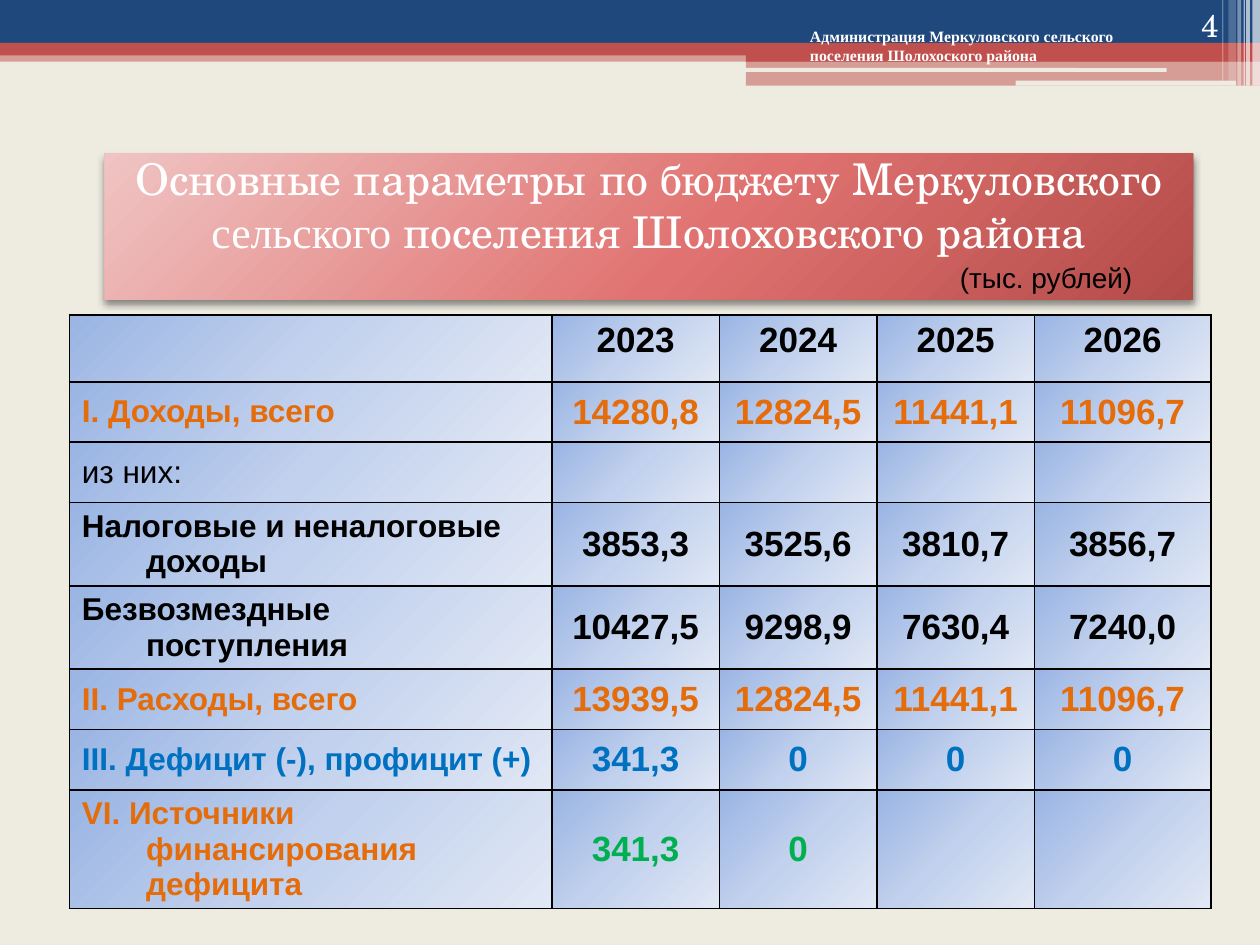
from dataclasses import dataclass

from lxml import etree
from pptx import Presentation
from pptx.dml.color import RGBColor
from pptx.enum.shapes import MSO_SHAPE
from pptx.enum.text import MSO_ANCHOR, MSO_AUTO_SIZE, PP_ALIGN
from pptx.oxml.ns import qn
from pptx.util import Inches, Pt

RECT, ROUND = MSO_SHAPE.RECTANGLE, MSO_SHAPE.ROUNDED_RECTANGLE
LEFT, CENTER, RIGHT = PP_ALIGN.LEFT, PP_ALIGN.CENTER, PP_ALIGN.RIGHT
TOP, MIDDLE, BOTTOM = MSO_ANCHOR.TOP, MSO_ANCHOR.MIDDLE, MSO_ANCHOR.BOTTOM
FIT_SHAPE, NO_FIT = MSO_AUTO_SIZE.SHAPE_TO_FIT_TEXT, MSO_AUTO_SIZE.NONE


@dataclass(frozen=True)
class Theme:
    paper: str = "EEECE1"
    navy: str = "1F497D"
    red: str = "C0504D"
    white: str = "FFFFFF"
    black: str = "000000"
    orange: str = "E46C0A"
    blue: str = "0070C0"
    green: str = "00B050"
    title_stops: tuple = ((0, "EFC4C3"), (55, "E07371"), (100, "B34B48"))
    title_focus: tuple = (-40, -90, 140, 190)
    cell_stops: tuple = ((0, "9AB5E4"), (50, "C2D1ED"), (100, "E1E8F5"))
    cell_focus: tuple = (0, 0, 100, 100)
    serif: str = "TeX Gyre Schola"
    roman: str = "Times New Roman"
    sans: str = "Arial"
    title_size: float = 25
    value_size: float = 20
    label_size: float = 18
    unit_size: float = 16
    header_size: float = 9


def element(parent, tag, **attributes):
    node = etree.SubElement(parent, qn(tag))
    for name, value in attributes.items():
        node.set(name, str(value))
    return node


def solid_color(parent, color, opacity=100):
    node = element(parent, "a:srgbClr", val=color)
    if opacity < 100:
        element(node, "a:alpha", val=opacity * 1000)


def gradient(parent, stops, focus):
    fill = element(parent, "a:gradFill", rotWithShape=1)
    stop_list = element(fill, "a:gsLst")
    for position, color in stops:
        solid_color(element(stop_list, "a:gs", pos=position * 1000), color)
    sides = {side: share * 1000 for side, share in zip("ltrb", focus)}
    element(element(fill, "a:path", path="circle"), "a:fillToRect", **sides)


class SlideBuilder:
    """Places elements on a grid of 100 columns by 75 rows."""

    def __init__(self, deck, theme):
        self.theme = theme
        self.column, self.row = deck.slide_width / 100, deck.slide_height / 75
        self.page = deck.slides.add_slide(deck.slide_layouts[5])
        background = self.page.background.fill
        background.solid()
        background.fore_color.rgb = RGBColor.from_string(theme.paper)

    def place(self, left, top, width, height):
        return (round(left * self.column), round(top * self.row),
                round(width * self.column), round(height * self.row))

    def style(self, span, size, color, font, bold=False):
        span.font.size, span.font.name, span.font.bold = Pt(size), font, bold
        span.font.color.rgb = RGBColor.from_string(color)

    def band(self, area, color, opacity=100, kind=RECT):
        shape = self.page.shapes.add_shape(kind, *self.place(*area))
        shape.shadow.inherit = False
        shape.line.fill.background()
        shape.fill.solid()
        shape.fill.fore_color.rgb = RGBColor.from_string(color)
        if opacity < 100:
            color_node = shape.fill._xPr.find(".//" + qn("a:srgbClr"))
            element(color_node, "a:alpha", val=opacity * 1000)

    def title(self, area, spans):
        box = self.page.shapes.title
        box.left, box.top, box.width, box.height = self.place(*area)
        properties = box._element.spPr
        gradient(properties, self.theme.title_stops, self.theme.title_focus)
        shadow = element(element(properties, "a:effectLst"), "a:outerShdw",
                         blurRad=Pt(4), dist=Pt(2), dir=90 * 60000, rotWithShape=0)
        solid_color(shadow, self.theme.black, 45)
        frame = box.text_frame
        frame.auto_size, frame.vertical_anchor = NO_FIT, MIDDLE
        frame.margin_bottom = Inches(0.4)  # room for the unit note
        para = frame.paragraphs[0]
        para.alignment = CENTER
        for text, font in spans:
            span = para.add_run()
            span.text = text
            self.style(span, self.theme.title_size, self.theme.white, font)
        self.page.shapes._spTree.append(box._element)  # above the bands

    def text(self, area, text, size, color, font, bold=False,
             align=LEFT, anchor=TOP, fit=FIT_SHAPE):
        box = self.page.shapes.add_textbox(*self.place(*area))
        frame = box.text_frame
        frame.word_wrap, frame.auto_size, frame.vertical_anchor = True, fit, anchor
        frame.text = text
        para = frame.paragraphs[0]
        para.alignment = align
        self.style(para.runs[0], size, color, font, bold)

    def cell(self, cell, text, size, color, bold, align, anchor):
        cell.vertical_anchor = anchor
        properties = cell._tc.get_or_add_tcPr()
        for side in ("a:lnL", "a:lnR", "a:lnT", "a:lnB"):
            line = element(properties, side, w=Pt(1))
            solid_color(element(line, "a:solidFill"), self.theme.black)
        gradient(properties, self.theme.cell_stops, self.theme.cell_focus)
        if not text:
            return
        cell.text = text
        para = cell.text_frame.paragraphs[0]
        para.alignment = align
        indent = Inches(0.51)
        para._p.get_or_add_pPr().set("marL", str(indent))
        para._p.get_or_add_pPr().set("indent", str(-indent))
        self.style(para.runs[0], size, color, self.theme.sans, bold)

    def table(self, left, top, widths, records):
        """Each record: height, label, values, label colour, value colour, bold."""
        area = self.place(left, top, sum(widths), sum(record[0] for record in records))
        table = self.page.shapes.add_table(len(records), len(widths), *area).table
        table.first_row = table.horz_banding = False
        for column, width in zip(table.columns, widths):
            column.width = round(width * self.column)
        for index, record in enumerate(records):
            height, label, values, label_color, value_color, bold = record
            table.rows[index].height = round(height * self.row)
            anchor = MIDDLE if index else TOP
            self.cell(table.cell(index, 0), label, self.theme.label_size,
                      label_color, bold, LEFT, anchor)
            for position, value in enumerate(values, 1):
                self.cell(table.cell(index, position), value, self.theme.value_size,
                          value_color, bold, CENTER, anchor)


def main():
    deck = Presentation()
    deck.slide_width, deck.slide_height = Inches(10), Inches(7.5)
    theme = Theme()
    slide = SlideBuilder(deck, theme)

    # Header bands
    slide.band((0, 4, 100, 0.9), theme.red, 50)
    slide.band((0, 0, 100, 3.4), theme.navy)
    slide.band((0, 3.4, 100, 1), theme.red)
    slide.band((59.2, 3.9, 40.8, 1), theme.red)
    slide.band((59.2, 4.8, 40.8, 2), theme.red, 50)
    slide.band((59.1, 5.4, 33.5, 0.3), theme.paper, kind=ROUND)
    slide.band((80.6, 6.4, 17.5, 0.4), theme.paper, kind=ROUND)

    # Corner stripes: left, width, height, opacity
    for left, width, height, opacity in (
            (99.4, 0.6, 6.8, 65), (98.9, 0.3, 6.8, 65), (98.7, 0.1, 6.8, 60),
            (98.2, 0.3, 6.8, 40), (97.5, 0.6, 6.4, 20), (97, 0.1, 6.4, 30)):
        slide.band((left, 0, width, height), theme.white, opacity)

    # Title
    slide.title((8.3, 12.2, 86.4, 11.6), (
        ("Основные параметры по бюджету Меркуловского ", theme.serif),
        ("сельского", theme.roman),
        (" поселения Шолоховского района", theme.serif)))

    # Budget table
    black, orange, blue, green = theme.black, theme.orange, theme.blue, theme.green
    slide.table(5.5, 25, (38.3, 13.3, 12.5, 12.5, 14), (
        (5.3, "", ("2023", "2024", "2025", "2026"), black, black, True),
        (4.8, "I. Доходы, всего",
         ("14280,8", "12824,5", "11441,1", "11096,7"), orange, orange, True),
        (4.8, "из них:", ("", "", "", ""), black, black, False),
        (5.6, "Налоговые и неналоговые доходы",
         ("3853,3", "3525,6", "3810,7", "3856,7"), black, black, True),
        (6.3, "Безвозмездные поступления",
         ("10427,5", "9298,9", "7630,4", "7240,0"), black, black, True),
        (4.8, "II. Расходы, всего",
         ("13939,5", "12824,5", "11441,1", "11096,7"), orange, orange, True),
        (4.8, "III. Дефицит (-), профицит (+)",
         ("341,3", "0", "0", "0"), blue, blue, True),
        (8.2, "VI. Источники финансирования дефицита",
         ("341,3", "0", "", ""), orange, green, True)))

    # Unit note, page number and header
    slide.text((75.2, 20.2, 22, 3.7), "(тыс. рублей)", theme.unit_size, black, theme.sans)
    slide.text((89.4, 0, 8.3, 4), "4", theme.label_size, theme.white, theme.serif,
               align=RIGHT, anchor=BOTTOM, fit=NO_FIT)
    slide.text((63.3, 1.6, 31.1, 4),
               "Администрация Меркуловского сельского поселения Шолохоского района",
               theme.header_size, theme.white, theme.roman, bold=True)

    deck.save("out.pptx")


if __name__ == "__main__":
    main()
